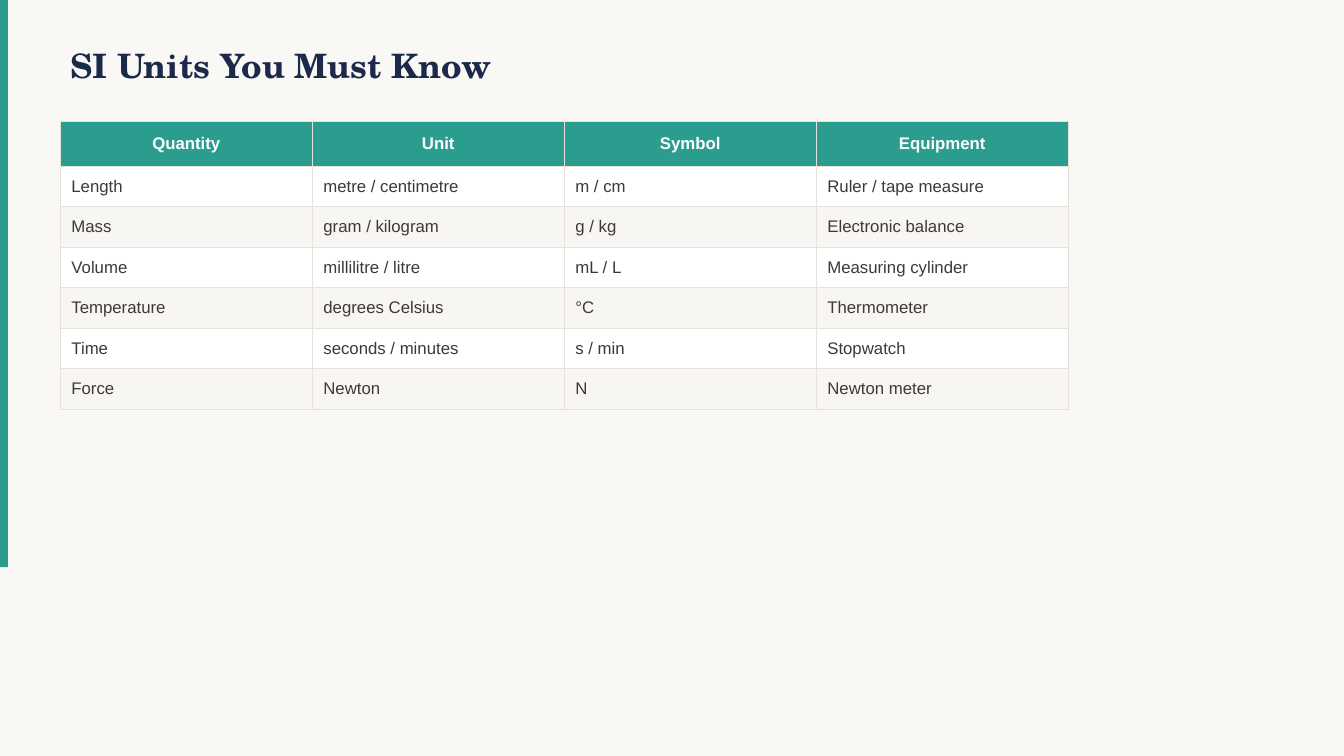
from lxml.etree import SubElement
from pptx import Presentation
from pptx.dml.color import RGBColor
from pptx.enum.shapes import MSO_SHAPE as Shape
from pptx.enum.text import MSO_ANCHOR as Anchor, PP_ALIGN as Align
from pptx.oxml.ns import qn
from pptx.util import Cm, Pt

TEAL, NAVY, CHARCOAL, WHITE = "2A9D8F", "1B2A4A", "3D3A36", "FFFFFF"
PAPER, STRIPE, GRID = "FAF8F5", "F8F6F3", "E5E2DC"

UNITS = [
    ("Quantity", "Unit", "Symbol", "Equipment"),
    ("Length", "metre / centimetre", "m / cm", "Ruler / tape measure"),
    ("Mass", "gram / kilogram", "g / kg", "Electronic balance"),
    ("Volume", "millilitre / litre", "mL / L", "Measuring cylinder"),
    ("Temperature", "degrees Celsius", "°C", "Thermometer"),
    ("Time", "seconds / minutes", "s / min", "Stopwatch"),
    ("Force", "Newton", "N", "Newton meter"),
]
HEADER_HEIGHT, ROW_HEIGHT = Cm(1.14), Cm(1.02)


def paint(color_format, hex_color):
    color_format.rgb = RGBColor.from_string(hex_color)


def fill_with(fill, hex_color):
    fill.solid()
    paint(fill.fore_color, hex_color)


def style_text(paragraph, family, size, hex_color, bold):
    for run in paragraph.runs:
        run.font.name = family
        run.font.size = Pt(size)
        run.font.bold = bold
        paint(run.font.color, hex_color)


def add_accent(slide, left, top, width, height):
    accent = slide.shapes.add_shape(Shape.RECTANGLE, left, top, width, height)
    accent.shadow.inherit = False
    fill_with(accent.fill, TEAL)
    accent.line.fill.background()


def add_title(slide, left, top, width, height):
    heading = slide.shapes.add_textbox(left, top, width, height).text_frame
    heading.word_wrap = True
    heading.vertical_anchor = Anchor.MIDDLE
    heading.text = "SI Units You Must Know"
    style_text(heading.paragraphs[0], "TeX Gyre Schola", 24, NAVY, True)


def add_borders(cell):
    properties = cell._tc.get_or_add_tcPr()
    for side in ("a:lnL", "a:lnR", "a:lnT", "a:lnB"):
        border = SubElement(properties, qn(side), w=str(Pt(0.5)))
        solid = SubElement(border, qn("a:solidFill"))
        SubElement(solid, qn("a:srgbClr"), val=GRID)


def fill_cell(cell, wording, row):
    is_header = row == 0
    add_borders(cell)
    fill_with(cell.fill, TEAL if is_header else WHITE if row % 2 else STRIPE)
    cell.margin_left = cell.margin_right = Cm(0.28)
    cell.margin_top = cell.margin_bottom = Cm(0.15)
    cell.vertical_anchor = Anchor.MIDDLE
    cell.text = wording
    paragraph = cell.text_frame.paragraphs[0]
    paragraph.alignment = Align.CENTER if is_header else Align.LEFT
    style_text(paragraph, "Arial", 12, WHITE if is_header else CHARCOAL, is_header)


def add_units_table(slide, left, top, width):
    height = HEADER_HEIGHT + ROW_HEIGHT * (len(UNITS) - 1)
    columns = len(UNITS[0])
    units = slide.shapes.add_table(len(UNITS), columns, left, top, width, height).table
    for column in units.columns:
        column.width = width // columns
    for row, entries in enumerate(UNITS):
        units.rows[row].height = ROW_HEIGHT if row else HEADER_HEIGHT
        for column, wording in enumerate(entries):
            fill_cell(units.cell(row, column), wording, row)


def main():
    deck = Presentation()
    deck.slide_width, deck.slide_height = Cm(33.87), Cm(19.05)
    slide = deck.slides.add_slide(deck.slide_layouts[6])
    fill_with(slide.background.fill, PAPER)

    # Accent bar on the left edge
    add_accent(slide, 0, 0, Cm(0.2), Cm(14.29))

    # Title and table share a left edge and width
    left, width = Cm(1.52), Cm(25.4)
    add_title(slide, left, Cm(0.76), width, Cm(1.78))
    add_units_table(slide, left, Cm(3.05), width)

    deck.save("out.pptx")


if __name__ == "__main__":
    main()
